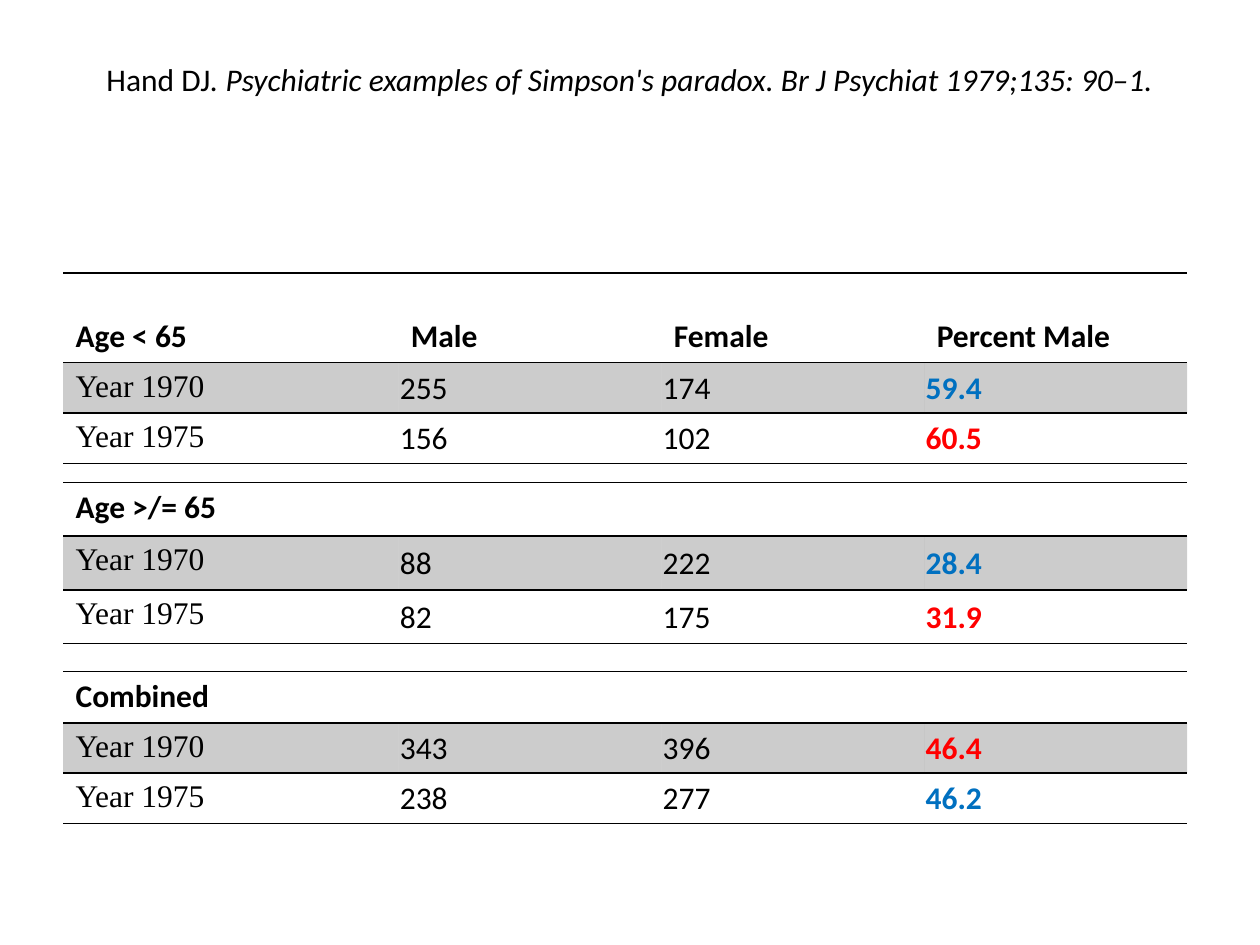
import pptx
import pptx.util
import pptx.oxml
import pptx.oxml.ns
import pptx.dml.color
import pptx.enum.text

Cm, Pt = pptx.util.Cm, pptx.util.Pt
RGBColor = pptx.dml.color.RGBColor
MSO_ANCHOR = pptx.enum.text.MSO_ANCHOR
qn = pptx.oxml.ns.qn

BLACK = RGBColor(0x00, 0x00, 0x00)
BLUE = RGBColor(0x00, 0x70, 0xC0)
RED = RGBColor(0xFF, 0x00, 0x00)
NO_STYLE = "{2D5ABB26-0587-4C30-8999-92F81FD0307C}"


def add_run(p, text, color=BLACK, **formats):
    r = p.add_run()
    r.text = text
    for name, value in {"name": "Calibri", "size": Pt(18), **formats}.items():
        setattr(r.font, name, value)
    r.font.color.rgb = color


def add_borders(cell, sides):
    for i, side in enumerate(sides):
        cell._tc.get_or_add_tcPr().insert(i, pptx.oxml.parse_xml(
            f'<a:ln{side} xmlns:a="http://schemas.openxmlformats.org/drawingml/2006/main" w="12700">'
            f'<a:solidFill><a:srgbClr val="{BLACK}"/></a:solidFill></a:ln{side}>'))


prs = pptx.Presentation()
prs.slide_width, prs.slide_height = Cm(25.4), Cm(19.05)
s = prs.slides.add_slide(prs.slide_layouts[6])

tf = s.shapes.add_textbox(Cm(1.27), Cm(0.76), Cm(22.86), Cm(3.18)).text_frame
for name, value in {"word_wrap": True, "margin_top": Cm(0.46),
                    "vertical_anchor": MSO_ANCHOR.TOP}.items():
    setattr(tf, name, value)
p = tf.paragraphs[0]
p.alignment = pptx.enum.text.PP_ALIGN.CENTER
add_run(p, "Hand DJ")
add_run(p, ". Psychiatric examples of Simpson's paradox. Br J Psychiat 1979;135: 90–1.", italic=True)

widths = [6.76, 5.3, 5.3, 5.3]
data_format = {"vertical_anchor": MSO_ANCHOR.MIDDLE, "margin_left": Cm(0.03),
               "margin_right": Cm(0.03), "margin_top": Cm(0.03), "margin_bottom": 0}
groups = [
    (5.5, [1.81, 0.97, 0.97], MSO_ANCHOR.BOTTOM, [BLUE, RED],
     [["Age < 65", "Male", "Female", "Percent Male"],
      ["Year 1970", "255", "174", "59.4"], ["Year 1975", "156", "102", "60.5"]]),
    (9.73, [1.08, 1.08, 1.08], MSO_ANCHOR.TOP, [BLUE, RED],
     [["Age >/= 65", "", "", ""],
      ["Year 1970", "88", "222", "28.4"], ["Year 1975", "82", "175", "31.9"]]),
    (13.54, [1.03, 0.97, 0.97], MSO_ANCHOR.TOP, [RED, BLUE],
     [["Combined", "", "", ""],
      ["Year 1970", "343", "396", "46.4"], ["Year 1975", "238", "277", "46.2"]]),
]

for top, heights, header_anchor, percent_colors, rows in groups:
    frame = s.shapes.add_table(3, 4, Cm(1.27), Cm(top), Cm(sum(widths)), Cm(sum(heights)))
    table = frame.table
    table.first_row = table.horz_banding = False
    table._tbl.tblPr.find(qn("a:tableStyleId")).text = NO_STYLE
    for column, width in zip(table.columns, widths):
        column.width = Cm(width)
    for i, (height, values) in enumerate(zip(heights, rows)):
        table.rows[i].height = Cm(height)
        for j, value in enumerate(values):
            cell = table.cell(i, j)
            p = cell.text_frame.paragraphs[0]
            if i == 1:
                cell.fill.solid()
                cell.fill.fore_color.rgb = BLACK
                color = cell._tc.tcPr.find(qn("a:solidFill"))[0]
                color.append(pptx.oxml.parse_xml(
                    '<a:alpha xmlns:a="http://schemas.openxmlformats.org/drawingml/2006/main" val="20000"/>'))
            else:
                cell.fill.background()
            add_borders(cell, [["T", "B"], ["T"], ["B"]][i])
            if i == 0:
                cell.vertical_anchor = header_anchor
            elif j > 0:
                for name, setting in data_format.items():
                    setattr(cell, name, setting)
            if value:
                add_run(p, value,
                        color=percent_colors[i - 1] if i and j == 3 else BLACK,
                        name="Times New Roman" if i and j == 0 else "Calibri",
                        bold=i == 0 or j == 3)

prs.save("out.pptx")
